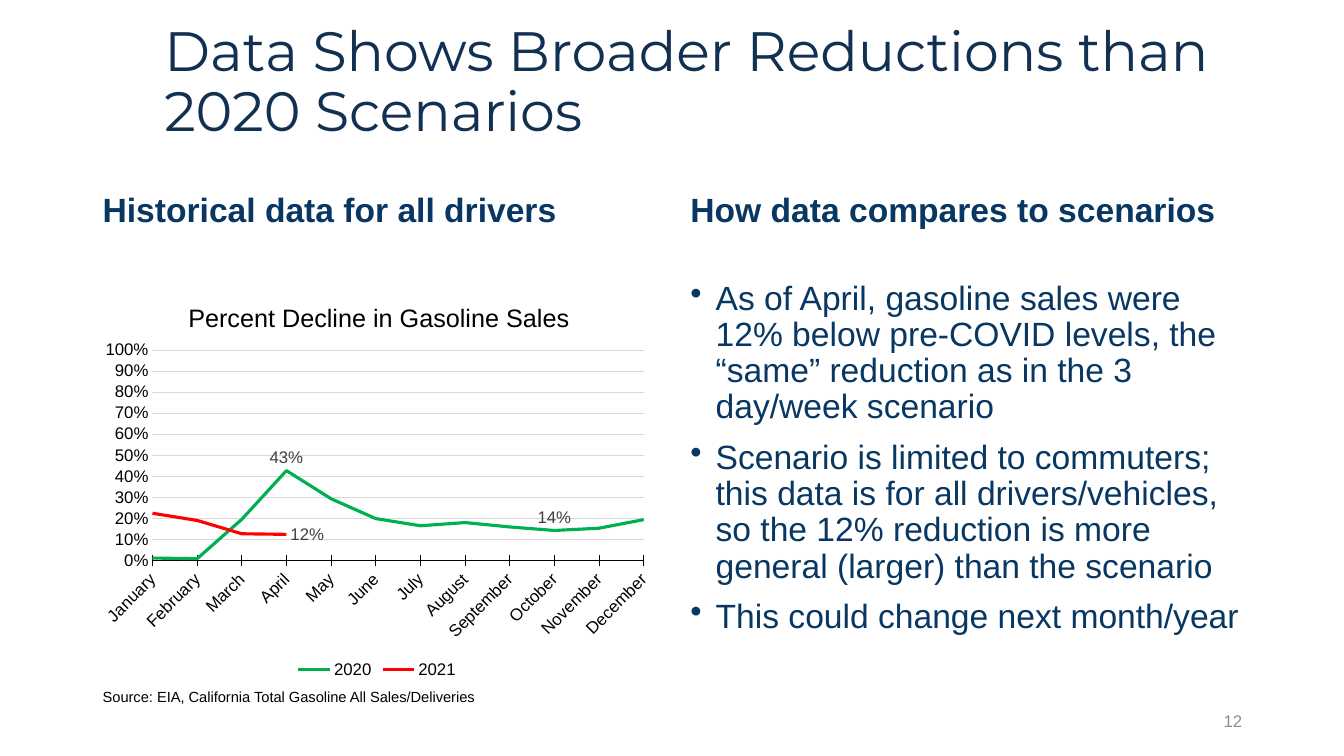
"""Build the slide on gasoline sales declines against the 2020 scenarios."""
from lxml import etree
from pptx import Presentation
from pptx import util as u
from pptx.chart import data
from pptx.dml.color import RGBColor
from pptx.enum import chart as charts, text
from pptx.oxml import ns

TITLE = "Data Shows Broader Reductions than 2020 Scenarios"
HEADINGS = ["Historical data for all drivers", "How data compares to scenarios"]
POINTS = [
    "As of April, gasoline sales were 12% below pre-COVID levels, the “same” reduction as in the 3 day/week scenario",
    "Scenario is limited to commuters; this data is for all drivers/vehicles, so the 12% reduction is more general (larger) than the scenario",
    "This could change next month/year",
]
SOURCE = "Source: EIA, California Total Gasoline All Sales/Deliveries"
PAGE_NUMBER = "12"
CHART_TITLE = "Percent Decline in Gasoline Sales"
MONTHS = ["January", "February", "March", "April", "May", "June", "July",
          "August", "September", "October", "November", "December"]
ABOVE, RIGHT = charts.XL_LABEL_POSITION.ABOVE, charts.XL_LABEL_POSITION.RIGHT
SERIES = [
    ("2020", "00B050", [0.0114, 0.0084, 0.1954, 0.4271, 0.2931, 0.1989,
                        0.165, 0.18, 0.1593, 0.1424, 0.1533, 0.194], {3: ABOVE, 9: ABOVE}),
    ("2021", "FF0000", [0.2243, 0.1902, 0.1269, 0.124] + [None] * 8, {3: RIGHT}),
]
NAVY, INK, BLACK, GREY, GRID, LABEL = "083763", "113052", "000000", "8C8C8C", "D9D9D9", "404040"

WIDTH, HEIGHT = 13.33, 7.5
COLUMNS = [(0.92, 5.64), (6.75, 5.67)]
HEADING_ROW, BODY_ROW = (1.84, 0.49), (2.74, 4.03)
SOURCE_TOP = sum(BODY_ROW)
RIGHT_EDGE = sum(COLUMNS[1])


def color(value):
    return RGBColor.from_string(value)


def style(font, size, tone, name="Arial", bold=False):
    font.size, font.name, font.bold = u.Pt(size), name, bold
    font.color.rgb = color(tone)


def cell(column, row):
    (left, width), (top, height) = column, row
    return [u.Inches(value) for value in (left, top, width, height)]


def add_text(page, place, lines, size, tone, anchor=text.MSO_ANCHOR.TOP, bold=False, bullets=False):
    frame = page.shapes.add_textbox(*place).text_frame
    frame.word_wrap = True
    frame.vertical_anchor = anchor
    frame.text = "\n".join(lines)
    for index, para in enumerate(frame.paragraphs):
        if bullets:
            props = para._p.get_or_add_pPr()
            props.set("marL", str(u.Inches(0.25)))
            props.set("indent", str(-u.Inches(0.25)))
            etree.SubElement(props, ns.qn("a:buChar"), char="•")
            para.space_before = u.Pt(10 if index else 0)
        if size == 24:
            para.line_spacing = 0.9
        style(para.font, size, tone, bold=bold)
    return frame


def set_layout(parent, position, **shares):
    """Fix a chart part at shares of the chart's size."""
    for old in parent.findall(ns.qn("c:layout")):
        parent.remove(old)
    layout = etree.Element(ns.qn("c:layout"))
    manual = etree.SubElement(layout, ns.qn("c:manualLayout"))
    if "w" in shares:
        etree.SubElement(manual, ns.qn("c:layoutTarget"), val="inner")
    for key in ("xMode", "yMode"):
        etree.SubElement(manual, ns.qn("c:" + key), val="edge")
    for key, share in shares.items():
        etree.SubElement(manual, ns.qn("c:" + key), val=str(share))
    parent.insert(position, layout)


def format_axes(chart):
    months, percents = chart.category_axis, chart.value_axis
    for axis in (months, percents):
        style(axis.tick_labels.font, 12, BLACK)
    months.major_tick_mark = charts.XL_TICK_MARK.CROSS
    months.format.line.color.rgb = color(BLACK)
    months.format.line.width = u.Pt(0.75)
    turned = months._element.find(ns.qn("c:txPr")).find(ns.qn("a:bodyPr"))
    turned.set("rot", "-2700000")
    percents.minimum_scale, percents.maximum_scale, percents.major_unit = 0, 1, 0.1
    percents.major_tick_mark = charts.XL_TICK_MARK.NONE
    percents.tick_labels.number_format = "0%"
    percents.tick_labels.number_format_is_linked = False
    percents.format.line.fill.background()
    percents.major_gridlines.format.line.color.rgb = color(GRID)
    percents.major_gridlines.format.line.width = u.Pt(0.75)
    scale = percents._element
    for old in scale.findall(ns.qn("c:crossBetween")):
        scale.remove(old)
    between = etree.Element(ns.qn("c:crossBetween"), val="midCat")
    scale.find(ns.qn("c:crosses")).addnext(between)


def add_sales_chart(page):
    sales = data.CategoryChartData(number_format="0%")
    sales.categories = MONTHS
    for name, _, values, _ in SERIES:
        sales.add_series(name, values)
    chart = page.shapes.add_chart(
        charts.XL_CHART_TYPE.LINE, *cell(COLUMNS[0], BODY_ROW), sales).chart
    style(chart.font, 12, BLACK)
    chart.has_title = True
    heading = chart.chart_title
    heading.text_frame.text = CHART_TITLE
    style(heading.text_frame.paragraphs[0].runs[0].font, 18, BLACK)
    set_layout(heading._element, 1, x=0.16, y=0.05)
    chart.has_legend = True
    chart.legend.position = charts.XL_LEGEND_POSITION.BOTTOM
    chart.legend.include_in_layout = False
    style(chart.legend.font, 12, BLACK)
    format_axes(chart)
    plot = chart.plots[0]
    plot.vary_by_categories = False
    for series, (_, tone, _, labels) in zip(plot.series, SERIES):
        series.smooth = False
        series.format.line.color.rgb = color(tone)
        series.format.line.width = u.Pt(2.25)
        series.data_labels.show_value = False
        for index, position in labels.items():
            label = series.points[index].data_label
            style(label.font, 12, LABEL)
            label.position = position
    area = chart.element.find(".//" + ns.qn("c:plotArea"))
    set_layout(area, 0, x=0.105, y=0.182, w=0.864, h=0.518)


def main():
    deck = Presentation()
    deck.slide_width, deck.slide_height = u.Inches(WIDTH), u.Inches(HEIGHT)
    page = deck.slides.add_slide(deck.slide_layouts[5])
    title = page.shapes.title
    title.left, title.top, title.width, title.height = cell((1.53, 10.89), (0.26, 1.14))
    title.text_frame.text = TITLE
    title.text_frame.word_wrap = True
    title.text_frame.auto_size = text.MSO_AUTO_SIZE.NONE
    title.text_frame.vertical_anchor = text.MSO_ANCHOR.MIDDLE
    para = title.text_frame.paragraphs[0]
    para.alignment = text.PP_ALIGN.LEFT
    para.line_spacing = 0.9
    style(para.runs[0].font, 39.6, INK, "Montserrat")

    for column, heading in zip(COLUMNS, HEADINGS):
        add_text(page, cell(column, HEADING_ROW), [heading], 24, NAVY, text.MSO_ANCHOR.BOTTOM, bold=True)
    add_sales_chart(page)
    add_text(page, cell(COLUMNS[1], BODY_ROW), POINTS, 24, NAVY, bullets=True)
    add_text(page, cell((COLUMNS[0][0], 4.01), (SOURCE_TOP, 0.28)), [SOURCE], 10.5, BLACK)
    number = add_text(page, cell((RIGHT_EDGE - 3, 3), (6.95, 0.4)), [PAGE_NUMBER], 12, GREY,
                      text.MSO_ANCHOR.MIDDLE)
    number.paragraphs[0].alignment = text.PP_ALIGN.RIGHT
    deck.save("out.pptx")


if __name__ == "__main__":
    main()
